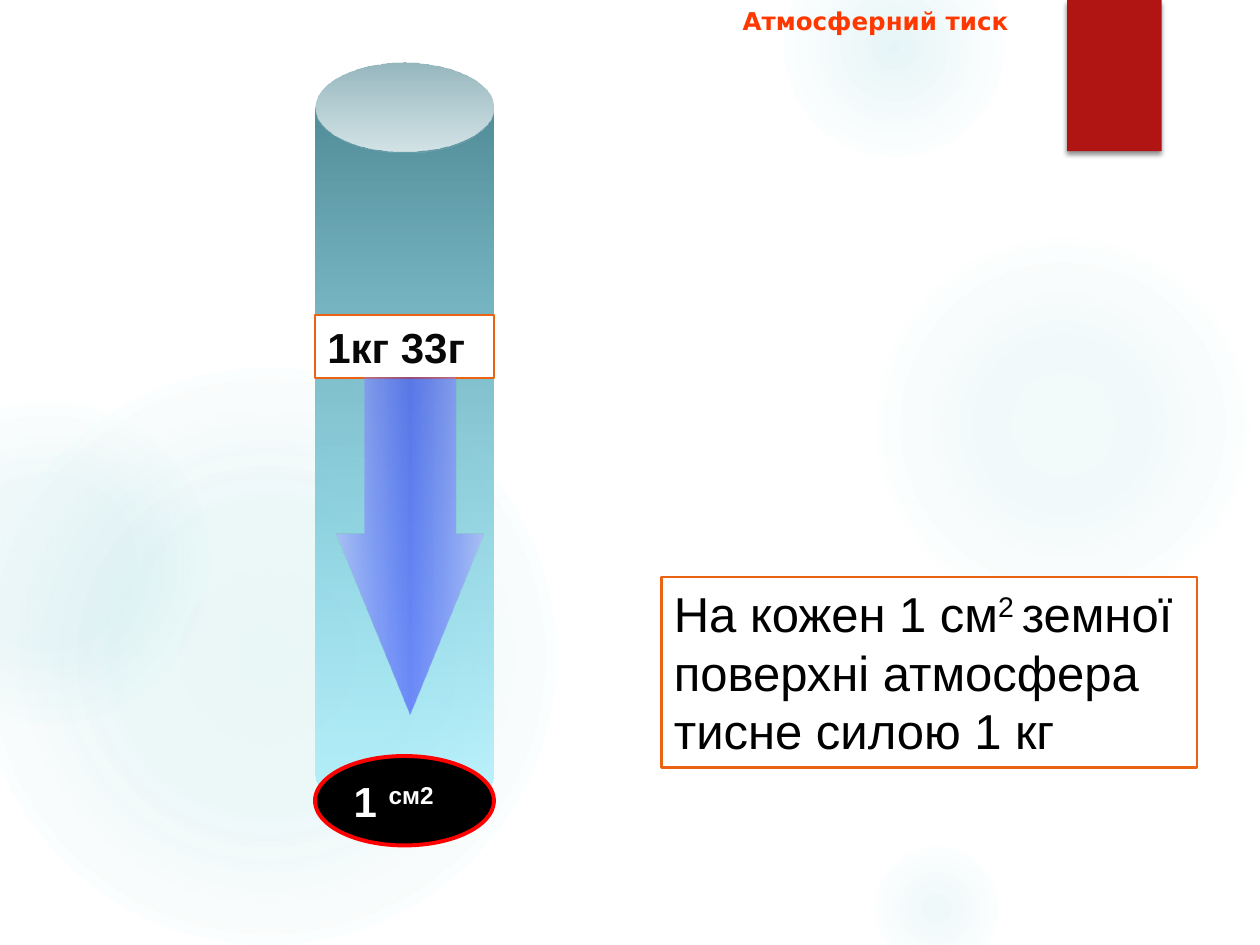
from pptx import Presentation
from pptx.dml.color import RGBColor
from pptx.enum.shapes import MSO_SHAPE as Shape
from pptx.enum.text import MSO_ANCHOR as Anchor, PP_ALIGN as Align
from pptx.oxml import parse_xml
from pptx.oxml.ns import nsdecls, qn
from pptx.util import Inches, Pt

COLORS = {
    "glow": "4CB9C3", "tab": "B01513", "orange": "EA6312", "red": "FF0000",
    "white": "FFFFFF", "black": "000000", "ink": "080808",
    "air_top": "216775", "air_bottom": "48E0FE",
    "arrow_edge": "B5B5FF", "arrow_core": "3333FF",
    "title_top": "FF7C50", "title_mid": "FF3800", "title_bottom": "FF2C00",
}


def gradient(stops, angle=None):
    gs = "".join(
        f'<a:gs pos="{pos * 1000}"><a:srgbClr val="{COLORS[color]}">'
        f'<a:alpha val="{alpha * 1000}"/></a:srgbClr></a:gs>'
        for pos, color, alpha in stops)
    if angle is None:
        way = ('<a:path path="circle"><a:fillToRect l="50000" t="50000" '
               'r="50000" b="50000"/></a:path>')
    else:
        way = f'<a:lin ang="{angle * 60000}" scaled="0"/>'
    return parse_xml(f'<a:gradFill {nsdecls("a")} rotWithShape="1">'
                     f'<a:gsLst>{gs}</a:gsLst>{way}</a:gradFill>')


class Deck:
    font = "Arial"

    def __init__(self, prs):
        self.s = prs.slides.add_slide(prs.slide_layouts[6])

    def rgb(self, name):
        return RGBColor.from_string(COLORS[name])

    def shape(self, kind, box, fill, line=None, width=1.5, adj=()):
        sp = self.s.shapes.add_shape(kind, *map(Inches, box))
        sp.shadow.inherit = False
        for i, value in enumerate(adj):
            sp.adjustments[i] = value
        if isinstance(fill, str):
            sp.fill.solid()
            sp.fill.fore_color.rgb = self.rgb(fill)
        else:
            sp.fill.background()
            empty = sp._element.spPr.find(qn("a:noFill"))
            sp._element.spPr.replace(empty, fill)
        if line:
            sp.line.color.rgb = self.rgb(line)
            sp.line.width = Pt(width)
        else:
            sp.line.fill.background()
        return sp

    def glow(self, x, y, size, inner, middle, edge):
        stops = [(0, "glow", inner), (36, "glow", middle),
                 (edge, "glow", 0), (100, "glow", 0)]
        return self.shape(Shape.OVAL, (x, y, size, size), gradient(stops))

    def shadow(self, sp):
        effects = sp._element.spPr.find(qn("a:effectLst"))
        effects.append(parse_xml(
            f'<a:outerShdw {nsdecls("a")} blurRad="{Pt(3)}" dist="{Pt(2)}" '
            'dir="5400000" rotWithShape="0"><a:srgbClr val="000000">'
            '<a:alpha val="45000"/></a:srgbClr></a:outerShdw>'))

    def text(self, sp, runs, size, color, bold=False, anchor=Anchor.TOP,
             align=Align.LEFT, font=None):
        tf = sp.text_frame
        tf.word_wrap = True
        tf.vertical_anchor = anchor
        p = tf.paragraphs[0]
        p.alignment = align
        for words, baseline in runs:
            r = p.add_run()
            r.text = words
            r.font.name = font or self.font
            r.font.size = Pt(size)
            r.font.bold = bold
            r.font.color.rgb = self.rgb(color)
            if baseline:
                r._r.get_or_add_rPr().set("baseline", str(baseline * 1000))
        return p

    def title(self, box, words):
        sp = self.s.shapes.add_textbox(*map(Inches, box))
        p = self.text(sp, [(words, 0)], 14, "title_mid", True,
                      align=Align.CENTER, font="DejaVu Sans")
        rPr = p.runs[0]._r.get_or_add_rPr()
        rPr.replace(rPr.find(qn("a:solidFill")), gradient(
            [(0, "title_top", 100), (75, "title_mid", 100),
             (100, "title_bottom", 100)], 90))


def main():
    prs = Presentation()
    prs.slide_width, prs.slide_height = Inches(10), Inches(7.5)
    deck = Deck(prs)

    for spot in [(6.89, 1.83, 3.08, 7, 6, 69), (6.22, -0.5, 1.75, 14, 7, 73),
                 (6.89, 6.67, 1.08, 9, 5, 66), (-0.17, 2.92, 4.58, 11, 10, 75),
                 (-0.92, 3.17, 2.58, 8, 8, 72)]:
        deck.glow(*spot)
    deck.shadow(deck.shape(Shape.RECTANGLE, (8.47, 0, 0.75, 1.2), "tab"))

    left, width = 2.5, 1.42
    deck.shape(Shape.CAN, (left, 0.5, width, 6), gradient(
        [(0, "air_top", 79), (100, "air_bottom", 32)], 90), adj=[0.498])
    area = deck.shape(Shape.OVAL, (left, 6, width, width / 2),
                      "black", "red", 2.25)
    deck.text(area, [("1 ", 0), ("см2", 30)], 24, "white", True, Anchor.MIDDLE)
    mass = deck.shape(Shape.RECTANGLE, (left, 2.5, width, 0.5),
                      "white", "orange")
    deck.text(mass, [("1кг 33г", 0)], 24, "ink", True)
    arrow = deck.shape(Shape.RIGHT_ARROW, (1.92, 3.75, 2.67, 1.17), gradient(
        [(0, "arrow_edge", 62), (50, "arrow_core", 51),
         (100, "arrow_edge", 62)], 90), adj=[0.62, 1.224])
    arrow.rotation = 90

    deck.title((4.33, 0, 5.24, 0.61), "Атмосферний тиск")
    note = deck.shape(Shape.RECTANGLE, (5.25, 4.58, 4.25, 1.51),
                      "white", "orange")
    deck.text(note, [("На кожен 1 см", 0), ("2 ", 30),
                     ("земної поверхні атмосфера тисне силою 1 кг", 0)],
              28, "black")
    prs.save("out.pptx")


if __name__ == "__main__":
    main()
